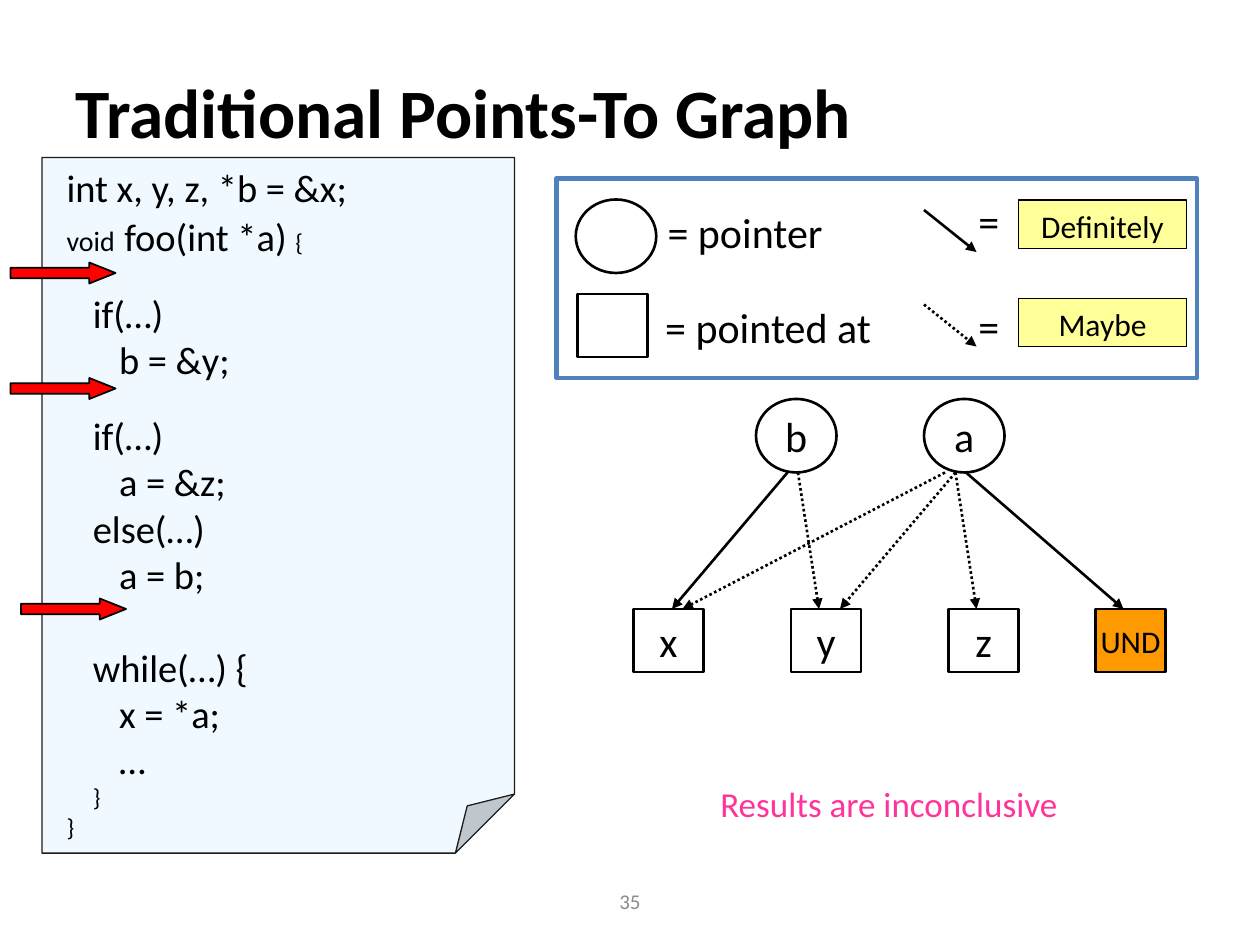
from lxml import etree
from pptx import Presentation
from pptx.dml.color import RGBColor
from pptx.enum.dml import MSO_LINE
from pptx.enum.shapes import MSO_CONNECTOR, MSO_SHAPE
from pptx.enum.text import MSO_ANCHOR, MSO_AUTO_SIZE, PP_ALIGN
from pptx.oxml.ns import qn
from pptx.util import Pt

RECT, OVAL = MSO_SHAPE.RECTANGLE, MSO_SHAPE.OVAL
LEFT, CENTER = PP_ALIGN.LEFT, PP_ALIGN.CENTER
TOP, MIDDLE = MSO_ANCHOR.TOP, MSO_ANCHOR.MIDDLE
DOTTED = MSO_LINE.ROUND_DOT

FONT = "Calibri"
BLACK = RGBColor(0x00, 0x00, 0x00)
GRAY = RGBColor(0x8C, 0x8C, 0x8C)
INK = RGBColor(0x1C, 0x1C, 0x1C)
PAPER = RGBColor(0xEF, 0xF9, 0xFF)
RED = RGBColor(0xFF, 0x00, 0x00)
ORANGE = RGBColor(0xFF, 0x99, 0x00)
YELLOW = RGBColor(0xFF, 0xFF, 0x99)
BLUE = RGBColor(0x4F, 0x81, 0xBD)
PINK = RGBColor(0xFF, 0x33, 0x99)

TITLE = "Traditional Points-To Graph"
# indent level, space before, runs of (text, size)
CODE = [
    (0, 0, [("int x, y, z, *b = &x;", 22)]),
    (0, 0, [("void", 16), (" ", 24), ("foo(int *a) ", 22), ("{", 14)]),
    (1, 17, [("if(…)", 22)]),
    (2, 0, [("b = &y;", 22)]),
    (1, 17, [("if(…)", 22)]),
    (2, 0, [("a = &z;", 22)]),
    (1, 0, [("else(…)", 22)]),
    (2, 0, [("a = b;", 22)]),
    (1, 26.8, [("while(…) {", 22)]),
    (2, 0, [("x = *a;", 22)]),
    (2, 0, [("…", 22)]),
    (1, 0, [("}", 14)]),
    (0, 0, [("}", 14)]),
]
INDENT = 15
STEP_MARKERS = [(6, 150), (6, 216), (12, 342)]

POINTER_SIZE, TARGET_SIZE = (46, 42), (40, 36)
POINTER_TOP, TARGET_TOP = 228, 348
POINTERS = [("b", 432), ("a", 528)]
# label, left, text size, fill
TARGETS = [("x", 362, 24, None), ("y", 452, 24, None),
           ("z", 542, 24, None), ("UND", 626, 18, ORANGE)]
# start x, end x, dash
EDGES = [(450, 384, None), (552, 642, None), (546, 480, DOTTED),
         (540, 390, DOTTED), (456, 468, DOTTED), (546, 558, DOTTED)]

LEGEND_FRAME = (318, 102, 366, 114)
# shape, box, meaning, text left, text top
LEGEND_NODES = [(OVAL, (329, 114, *POINTER_SIZE), "= pointer", 374.4, 114.5),
                (RECT, (330, 168, *TARGET_SIZE), "= pointed at", 373, 168.5)]
# arrow top, dash, "=" top, meaning, label top
LEGEND_EDGES = [(120, None, 108, "Definitely", 114.5),
                (174, DOTTED, 168, "Maybe", 170.6)]


def write(shape, text, size, color=BLACK, align=CENTER, anchor=MIDDLE, wrap=False):
    frame = shape.text_frame
    frame.word_wrap = wrap
    frame.auto_size = MSO_AUTO_SIZE.NONE
    frame.vertical_anchor = anchor
    paragraph = frame.paragraphs[0]
    paragraph.text = text
    paragraph.alignment = align
    paragraph.font.name = FONT
    paragraph.font.size = Pt(size)
    paragraph.font.color.rgb = color


def add_text(slide, box, text, size, **style):
    write(slide.shapes.add_textbox(*map(Pt, box)), text, size, **style)


def add_box(slide, kind, box, fill=None, line=BLACK, width=1.5):
    shape = slide.shapes.add_shape(kind, *map(Pt, box))
    shape.shadow.inherit = False
    if fill is None:
        shape.fill.background()
    else:
        shape.fill.solid()
        shape.fill.fore_color.rgb = fill
    shape.line.color.rgb = line
    shape.line.width = Pt(width)
    return shape


def add_arrow(slide, start, end, dash=None):
    arrow = slide.shapes.add_connector(
        MSO_CONNECTOR.STRAIGHT, *map(Pt, (*start, *end)))
    arrow.line.color.rgb = BLACK
    arrow.line.width = Pt(1.5)
    if dash is not None:
        arrow.line.dash_style = dash
    head = etree.SubElement(arrow._element.spPr.find(qn("a:ln")), qn("a:tailEnd"))
    head.set("type", "triangle")
    etree.SubElement(arrow._element.spPr, qn("a:effectLst"))


def set_adjustments(shape, **values):
    """Write the shape's guides directly, as some presets expose none."""
    guides = shape._element.spPr.find(qn("a:prstGeom")).find(qn("a:avLst"))
    for child in list(guides):
        guides.remove(child)
    for name, value in values.items():
        guide = etree.SubElement(guides, qn("a:gd"))
        guide.set("name", name)
        guide.set("fmla", f"val {round(value * 100000)}")


def add_code(slide):
    sheet = add_box(slide, MSO_SHAPE.FOLDED_CORNER, (24, 90, 270, 397.5),
                    PAPER, INK, 0.75)
    set_adjustments(sheet, adj=0.125)
    frame = slide.shapes.add_textbox(*map(Pt, (31, 90, 263.5, 395))).text_frame
    frame.word_wrap = True
    for number, (level, gap, runs) in enumerate(CODE):
        line = frame.add_paragraph() if number else frame.paragraphs[0]
        line.font.name = FONT
        line.font.color.rgb = BLACK
        line.space_before = Pt(gap)
        line._p.get_or_add_pPr().set("marL", str(int(Pt(level * INDENT))))
        for text, size in runs:
            run = line.add_run()
            run.text = text
            run.font.size = Pt(size)
    for left, top in STEP_MARKERS:
        marker = add_box(slide, MSO_SHAPE.RIGHT_ARROW, (left, top, 60, 12),
                         RED, width=1)
        set_adjustments(marker, adj1=0.5, adj2=1.25)


def add_graph(slide):
    for label, left in POINTERS:
        write(add_box(slide, OVAL, (left, POINTER_TOP, *POINTER_SIZE)), label, 24)
    for label, left, size, fill in TARGETS:
        node = add_box(slide, RECT, (left, TARGET_TOP, *TARGET_SIZE), fill)
        write(node, label, size)
    for start, end, dash in EDGES:
        add_arrow(slide, (start, POINTER_TOP + POINTER_SIZE[1]),
                  (end, TARGET_TOP), dash)


def add_legend(slide):
    add_box(slide, RECT, LEGEND_FRAME, line=BLUE, width=2.5)
    for kind, box, meaning, left, top in LEGEND_NODES:
        add_box(slide, kind, box)
        add_text(slide, (left, top, 140, 36), meaning, 24, align=LEFT, anchor=TOP)
    for top, dash, equals_top, meaning, label_top in LEGEND_EDGES:
        add_arrow(slide, (528, top), (558, top + 24), dash)
        add_text(slide, (552, equals_top, 29, 36), "=", 24, align=LEFT, anchor=TOP)
        label = add_box(slide, RECT, (582, label_top, 96, 27.5), YELLOW, width=1)
        write(label, meaning, 18, anchor=TOP, wrap=True)


def main():
    deck = Presentation()
    deck.slide_width, deck.slide_height = Pt(720), Pt(540)
    slide = deck.slides.add_slide(deck.slide_layouts[5])
    title = slide.shapes.title
    title.left, title.top, title.width, title.height = map(Pt, (36, 36, 648, 55))
    write(title, TITLE, 39.6, align=LEFT, wrap=True)
    title.text_frame.paragraphs[0].font.bold = True

    add_code(slide)
    add_graph(slide)
    add_legend(slide)
    add_text(slide, (328, 441, 360, 36), "Results are inconclusive", 20,
             color=PINK, wrap=True)
    add_text(slide, (246, 500.5, 228, 28.5), "35", 12, color=GRAY, wrap=True)
    deck.save("out.pptx")


if __name__ == "__main__":
    main()
